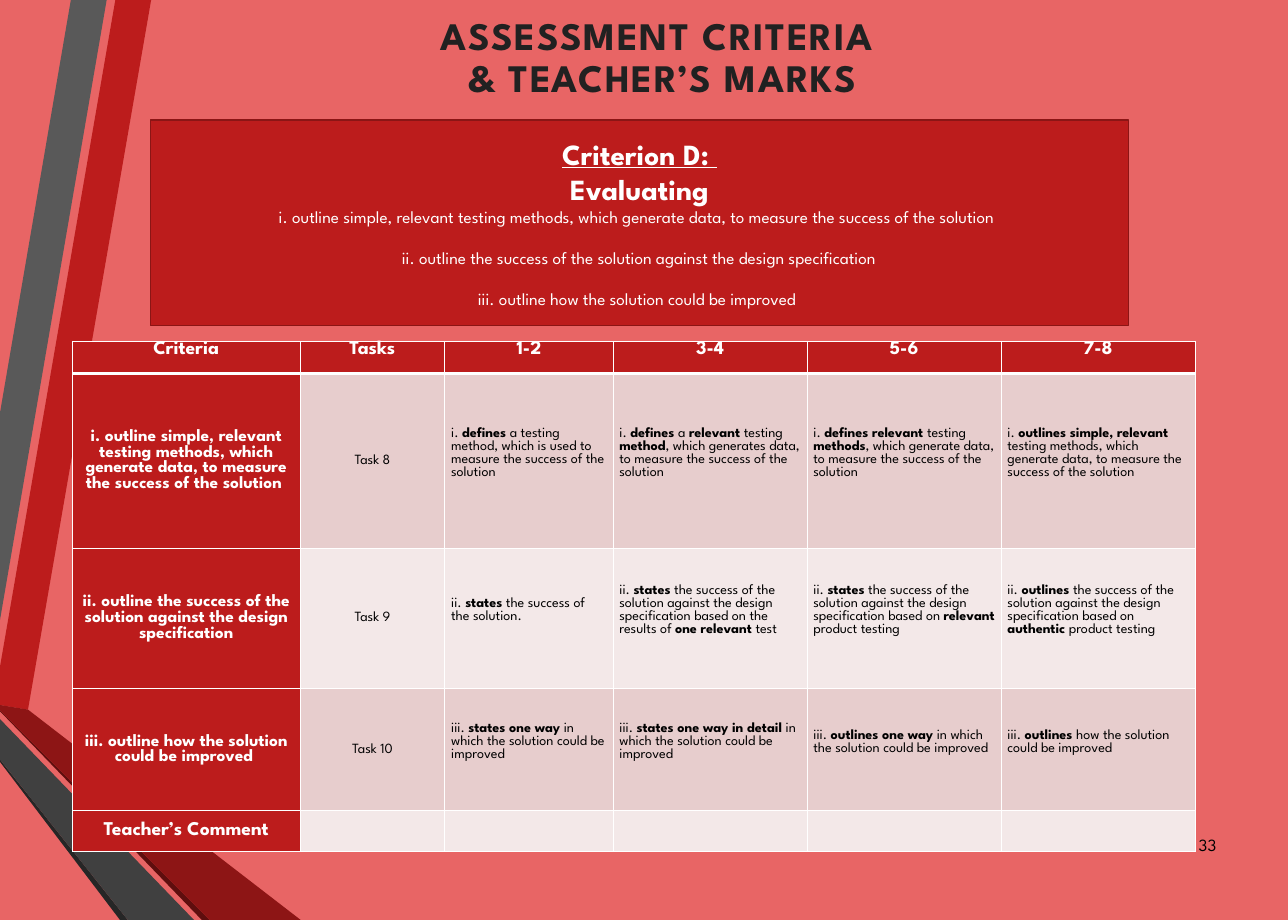
import dataclasses

import pptx
import pptx.dml.color
import pptx.enum.shapes
import pptx.enum.text
import pptx.oxml
import pptx.oxml.ns
import pptx.util

Pt = pptx.util.Pt
ALIGN = pptx.enum.text.PP_ALIGN
ANCHOR = pptx.enum.text.MSO_ANCHOR


@dataclasses.dataclass(frozen=True)
class Theme:
    font: str = "League Spartan"
    background: str = "E86565"
    red: str = "BC1C1C"
    red_edge: str = "8B1515"
    red_dark: str = "8D1515"
    red_deep: str = "5E0E0E"
    gray: str = "595959"
    gray_dark: str = "404040"
    gray_deep: str = "262626"
    band_dark: str = "E7CDCD"
    band_light: str = "F3E8E8"
    title_ink: str = "212121"
    black: str = "000000"
    white: str = "FFFFFF"
    title_size: float = 36
    heading_size: float = 27
    header_size: float = 18
    criterion_size: float = 16
    body_size: float = 15.8
    cell_size: float = 13


theme = Theme()


def paint(fill, color):
    fill.solid()
    fill.fore_color.rgb = pptx.dml.color.RGBColor.from_string(color)


def write(para, text, size, color, line, align=ALIGN.CENTER, bold=False):
    """Add text as runs; parts between asterisks switch the weight."""
    para.alignment = align
    para.line_spacing = Pt(line)
    for index, part in enumerate(text.split("*")):
        if part:
            span = para.add_run()
            span.text = part
            span.font.name = theme.font
            span.font.size = Pt(size)
            span.font.bold = bold != (index % 2 == 1)
            paint(span.font.fill, color)


deck = pptx.Presentation()
deck.slide_width, deck.slide_height = Pt(1190.2), Pt(850.3)
page = deck.slides.add_slide(deck.slide_layouts[5])
paint(page.background.fill, theme.background)

# Ribbons along the left edge
ribbons = [
    (theme.red, [(0, 616.3), (0, 651.6), (25.9, 655.9), (139.7, 0), (106.6, 0)]),
    (theme.gray, [(98.6, 0), (65.5, 0), (0, 381.6), (0, 573.1)]),
    (theme.gray_deep, [(0, 702), (0, 704.2), (110.9, 850.3), (118.1, 850.3)]),
    (theme.red_deep, [(0, 656.6), (0, 657.4), (186.5, 850.3), (193.7, 850.3)]),
    (theme.red_dark, [(0, 656.6), (193.7, 850.3), (277.9, 850.3), (25.9, 655.9), (0, 651.6)]),
    (theme.gray_dark, [(0, 702), (118.1, 850.3), (179.3, 850.3), (0, 664.6)]),
]
for color, corners in ribbons:
    points = [(Pt(x), Pt(y)) for x, y in corners]
    builder = page.shapes.build_freeform(*points[0])
    builder.add_line_segments(points[1:], close=True)
    ribbon = builder.convert_to_shape()
    ribbon.shadow.inherit = False
    paint(ribbon.fill, color)
    ribbon.line.fill.background()

# Page number
number = page.shapes.add_textbox(Pt(1077.1), Pt(758.2), Pt(54), Pt(45.4))
number.text_frame.word_wrap = True
number.text_frame.vertical_anchor = ANCHOR.MIDDLE
write(number.text_frame.paragraphs[0], "33", theme.body_size, theme.black, 19, ALIGN.RIGHT)

# Title
title = page.shapes.title
title.left, title.top, title.width, title.height = Pt(139), Pt(10.1), Pt(946.8), Pt(135.4)
frame = title.text_frame
frame.auto_size = pptx.enum.text.MSO_AUTO_SIZE.NONE
frame.vertical_anchor = ANCHOR.TOP
frame.margin_left = frame.margin_right = Pt(10.8)
frame.margin_top = frame.margin_bottom = Pt(5)
for index, text in enumerate(["ASSESSMENT CRITERIA ", "& TEACHER’S MARKS"]):
    para = frame.add_paragraph() if index else frame.paragraphs[0]
    para.space_before = Pt(0)
    write(para, text, theme.title_size, theme.title_ink, 38.9, bold=True)
    para.runs[0].font._element.set("spc", "150")

# Criteria table
criteria = [
    ("i. outline simple, relevant testing methods, which generate data, to measure the success of the solution ",
     "Task 8",
     "i. *defines *a testing method, which is used to measure the success of the solution",
     "i. *defines *a *relevant *testing *method*, which generates data, to measure the success of the solution",
     "i. *defines relevant *testing *methods*, which generate data, to measure the success of the solution",
     "i. *outlines simple, relevant *testing methods, which generate data, to measure the success of the solution"),
    ("ii. outline the success of the solution against the design specification",
     "Task 9",
     "ii. *states *the success of the solution.",
     "ii. *states *the success of the solution against the design specification based on the results of *one relevant *test",
     "ii. *states *the success of the solution against the design specification based on *relevant *product testing",
     "ii. *outlines *the success of the solution against the design specification based on *authentic *product testing"),
    ("iii. outline how the solution could be improved ",
     "Task 10",
     "iii. *states one way *in which the solution could be improved",
     "iii. *states one way in detail *in which the solution could be improved",
     "iii. *outlines one way *in which the solution could be improved",
     "iii. *outlines *how the solution could be improved"),
]
header = ("Criteria", "Tasks", "1-2", "3-4", "5-6", "7-8")
comment = ("Teacher’s Comment", "", "", "", "", "")
rows = [header, *criteria, comment]
widths = [210.2, 133.9, 155.5, 179.3, 179.3, 179.3]
heights = [29.5, 162, 129.6, 113, 37.4]
grid = page.shapes.add_table(len(rows), len(widths), Pt(67), Pt(315.4),
                             Pt(sum(widths)), Pt(sum(heights))).table
for column, width in zip(grid.columns, widths):
    column.width = Pt(width)
for row, height in zip(grid.rows, heights):
    row.height = Pt(height)

for r, texts in enumerate(rows):
    for c, text in enumerate(texts):
        cell = grid.cell(r, c)
        label = r == 0 or c == 0
        descriptor = c >= 2 and 0 < r < len(rows) - 1
        paint(cell.fill, theme.red if label else theme.band_dark if r % 2 else theme.band_light)
        cell.vertical_anchor = ANCHOR.MIDDLE if r else ANCHOR.TOP
        cell.margin_left = cell.margin_right = Pt(5.8)
        cell.margin_top = Pt(0)
        cell.margin_bottom = Pt(14 if descriptor else 0)
        if label:
            size = theme.header_size if text in header + comment else theme.criterion_size
        else:
            size = theme.cell_size
        write(cell.text_frame.paragraphs[0], text, size, theme.white if label else theme.black,
              round(size * 0.92, 1), ALIGN.LEFT if descriptor else ALIGN.CENTER, label)
        # Borders, with a heavier rule under the header
        for place, side in enumerate("LRTB"):
            weight = Pt(3 if r == 0 and side == "B" else 1)
            edge = pptx.oxml.parse_xml(
                f'<a:ln{side} {pptx.oxml.ns.nsdecls("a")} w="{weight}"><a:solidFill>'
                f'<a:srgbClr val="{theme.white}"/></a:solidFill></a:ln{side}>')
            cell._tc.get_or_add_tcPr().insert(place, edge)

# Criterion box
box = page.shapes.add_shape(pptx.enum.shapes.MSO_SHAPE.RECTANGLE,
                            Pt(139), Pt(110.9), Pt(903.6), Pt(190.1))
box.shadow.inherit = False
paint(box.fill, theme.red)
paint(box.line.fill, theme.red_edge)
box.line.width = Pt(1.25)
box.text_frame.word_wrap = True
box.text_frame.vertical_anchor = ANCHOR.MIDDLE
strands = [
    ("Criterion D: ", theme.heading_size, 0),
    ("Evaluating", theme.heading_size, 0),
    (criteria[0][0], theme.body_size, 0),
    (criteria[1][0], theme.body_size, 19),
    (criteria[2][0], theme.body_size, 19),
]
for index, (text, size, gap) in enumerate(strands):
    para = box.text_frame.add_paragraph() if index else box.text_frame.paragraphs[0]
    para.space_before = Pt(gap)
    write(para, text, size, theme.white, round(size * 1.2, 1), bold=size == theme.heading_size)
box.text_frame.paragraphs[0].runs[0].font.underline = True

deck.save("out.pptx")
